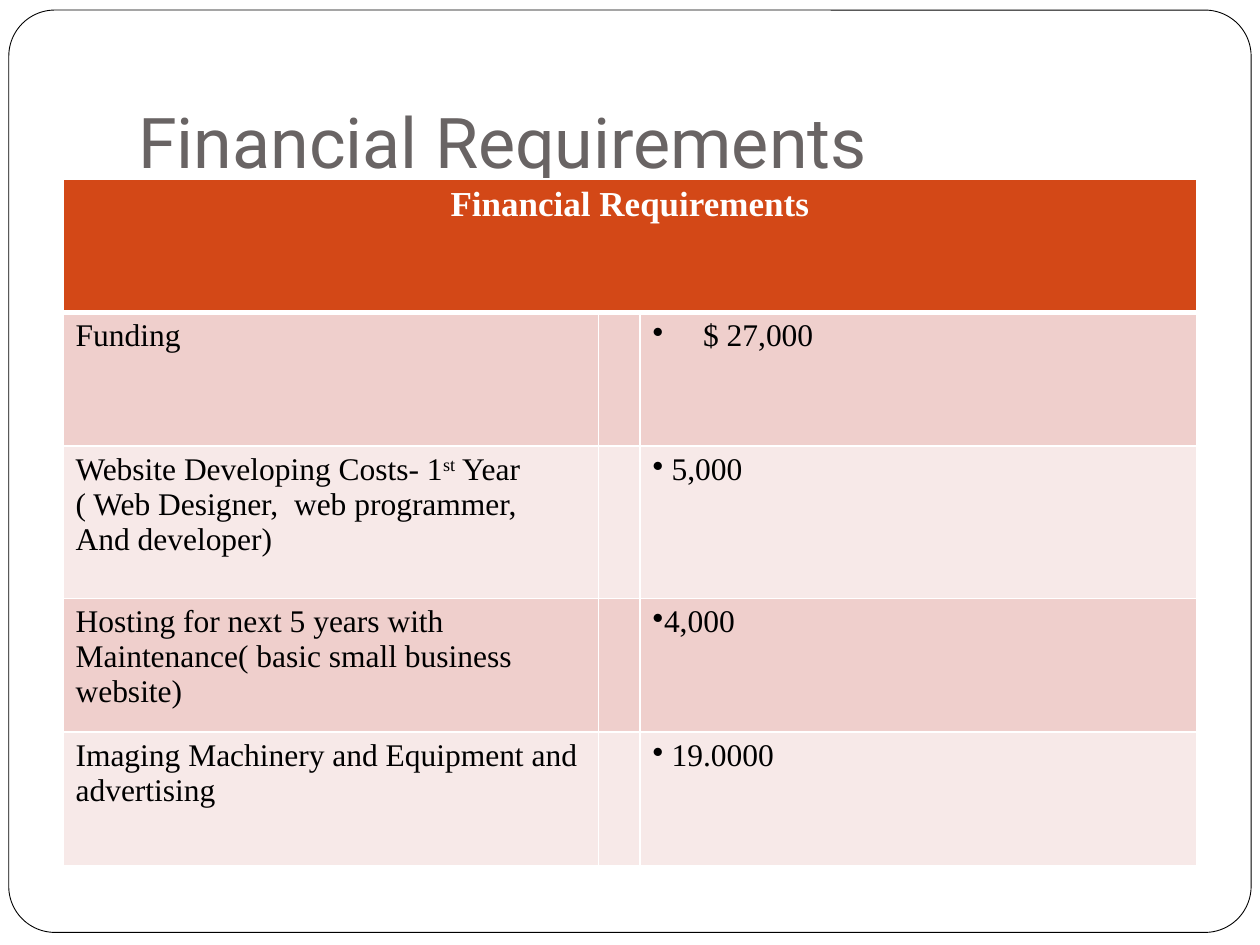
from dataclasses import dataclass

from lxml import etree
from pptx import Presentation
from pptx.dml.color import RGBColor
from pptx.enum.shapes import MSO_SHAPE
from pptx.enum.text import MSO_ANCHOR, PP_ALIGN
from pptx.oxml.ns import qn
from pptx.slide import Slide
from pptx.table import Table, _Cell
from pptx.util import Inches, Pt

ROUNDED = MSO_SHAPE.ROUNDED_RECTANGLE
BOTTOM = MSO_ANCHOR.BOTTOM
CENTER = PP_ALIGN.CENTER

WHITE = RGBColor(0xFF, 0xFF, 0xFF)
BLACK = RGBColor(0x00, 0x00, 0x00)
GRAY = RGBColor(0x69, 0x64, 0x64)
ORANGE = RGBColor(0xD3, 0x48, 0x17)
BANDS = (RGBColor(0xEF, 0xCF, 0xCC), RGBColor(0xF7, 0xE9, 0xE8))

TITLE = "Financial Requirements"
TITLE_FONT = "Roboto"
TABLE_FONT = "Times New Roman"
COLUMN_WIDTHS = (4.25, 0.33, 4.42)
ROW_HEIGHTS = (1.06, 1.06, 1.21, 1.06, 1.06)
THIN, THICK = 1, 3


@dataclass(frozen=True)
class CostRow:
    """One table row; a caret pair in the label encloses superscript."""
    label: str
    amount: str
    bullet_gap: float


COSTS = (
    CostRow("Funding", "$ 27,000", 0.4),
    CostRow("Website Developing Costs- 1^st^ Year\n"
            "( Web Designer,  web programmer,\nAnd developer)", "5,000", 0.15),
    CostRow("Hosting for next 5 years with Maintenance( basic small business website)",
            "4,000", 0.09),
    CostRow("Imaging Machinery and Equipment and advertising", "19.0000", 0.15),
)


def add_frame(page: Slide) -> None:
    frame = page.shapes.add_shape(ROUNDED, Inches(0.07), Inches(0.08),
                                  Inches(9.86), Inches(7.32))
    frame.adjustments[0] = 0.05
    frame.shadow.inherit = False
    frame.fill.solid()
    frame.fill.fore_color.rgb = WHITE
    frame.line.color.rgb = BLACK
    frame.line.width = Pt(0.5)


def style_font(font, name: str, size: float, color: RGBColor, bold: bool = False) -> None:
    font.name = name
    font.size = Pt(size)
    font.bold = bold
    font.color.rgb = color


def add_title(page: Slide) -> None:
    box = page.shapes.add_textbox(Inches(1), Inches(0.3), Inches(8.5), Inches(1.25))
    text_frame = box.text_frame
    text_frame.word_wrap = True
    text_frame.vertical_anchor = BOTTOM
    text_frame.margin_bottom = Inches(0.1)
    text_frame.text = TITLE
    style_font(text_frame.paragraphs[0].runs[0].font, TITLE_FONT, 40, GRAY)


def style_cell(cell: _Cell, fill: RGBColor, top: float = THIN, bottom: float = THIN) -> None:
    """Draw white borders, widths in points, and then the fill."""
    properties = cell._tc.get_or_add_tcPr()
    for side, width in (("L", THIN), ("R", THIN), ("T", top), ("B", bottom)):
        line = etree.SubElement(properties, qn(f"a:ln{side}"), w=str(Pt(width)))
        solid = etree.SubElement(line, qn("a:solidFill"))
        etree.SubElement(solid, qn("a:srgbClr"), val=str(WHITE))
    cell.fill.solid()
    cell.fill.fore_color.rgb = fill


def write_label(cell: _Cell, label: str) -> None:
    for index, text in enumerate(label.split("\n")):
        frame = cell.text_frame
        para = frame.add_paragraph() if index else frame.paragraphs[0]
        for position, part in enumerate(text.split("^")):
            span = para.add_run()
            span.text = part
            style_font(span.font, TABLE_FONT, 18, BLACK)
            if position % 2:
                span._r.get_or_add_rPr().set("baseline", "30000")


def write_amount(cell: _Cell, cost: CostRow) -> None:
    para = cell.text_frame.paragraphs[0]
    para.text = cost.amount
    properties = para._p.get_or_add_pPr()
    gap = Inches(cost.bullet_gap)
    properties.set("marL", str(gap))
    properties.set("indent", str(-gap))
    etree.SubElement(properties, qn("a:buChar"), char="•")
    style_font(para.runs[0].font, TABLE_FONT, 18, BLACK)


def fill_header(table: Table) -> None:
    for cell in table.rows[0].cells:
        style_cell(cell, ORANGE, bottom=THICK)
    header = table.cell(0, 0)
    header.merge(table.cell(0, len(COLUMN_WIDTHS) - 1))
    header.text_frame.text = TITLE
    para = header.text_frame.paragraphs[0]
    para.alignment = CENTER
    style_font(para.runs[0].font, TABLE_FONT, 20, WHITE, bold=True)


def add_cost_table(page: Slide) -> None:
    table = page.shapes.add_table(
        len(ROW_HEIGHTS), len(COLUMN_WIDTHS), Inches(0.5), Inches(1.42),
        Inches(sum(COLUMN_WIDTHS)), Inches(sum(ROW_HEIGHTS))).table
    for column, width in zip(table.columns, COLUMN_WIDTHS):
        column.width = Inches(width)
    for row, height in zip(table.rows, ROW_HEIGHTS):
        row.height = Inches(height)
    fill_header(table)
    for index, cost in enumerate(COSTS):
        cells = list(table.rows[index + 1].cells)
        for cell in cells:
            style_cell(cell, BANDS[index % 2], top=THIN if index else THICK)
        write_label(cells[0], cost.label)
        write_amount(cells[-1], cost)


def main() -> None:
    deck = Presentation()
    deck.slide_width, deck.slide_height = Inches(10), Inches(7.5)
    page = deck.slides.add_slide(deck.slide_layouts[6])
    add_frame(page)
    add_title(page)
    add_cost_table(page)
    deck.save("out.pptx")


if __name__ == "__main__":
    main()
